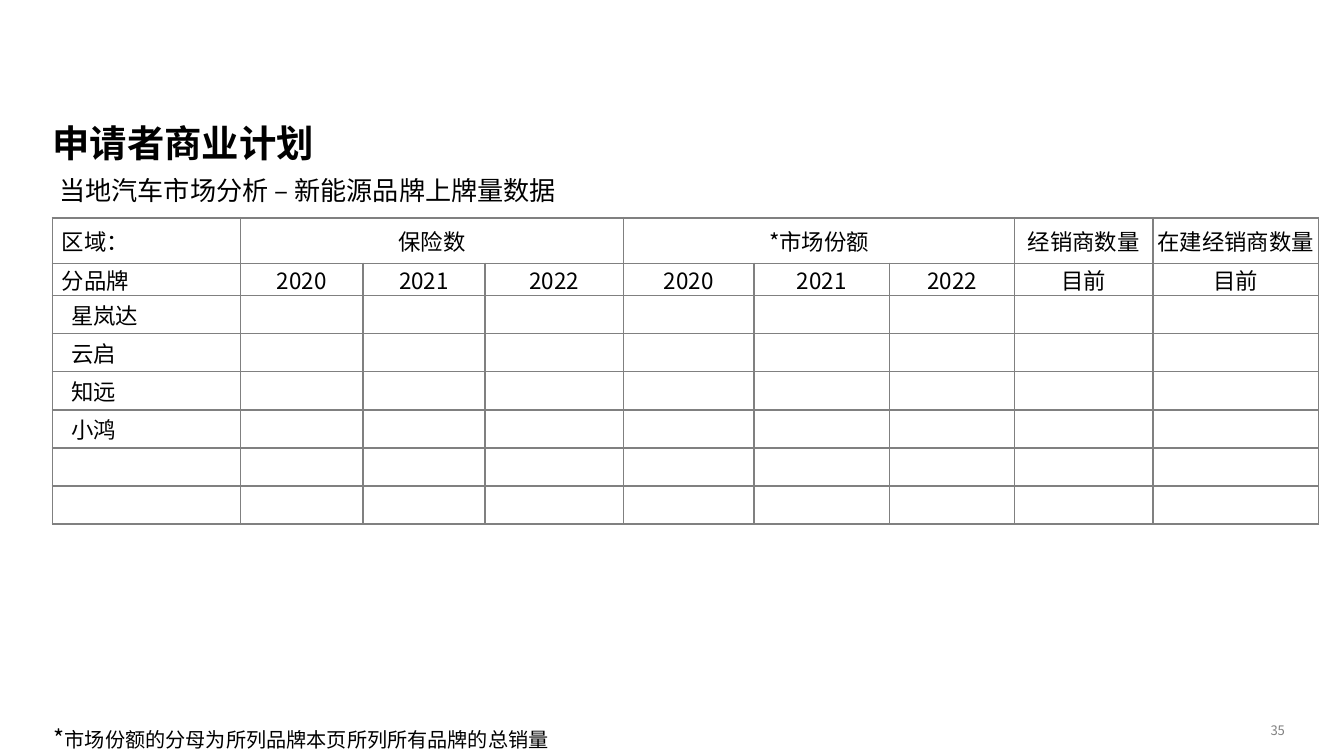
from lxml.etree import SubElement
from pptx import Presentation
from pptx.dml.color import RGBColor
from pptx.enum.text import MSO_ANCHOR as Anchor, PP_ALIGN as Align
from pptx.oxml.ns import qn
from pptx.util import Inches, Pt

FONT = "Noto Sans CJK SC"
BLACK = RGBColor(0x00, 0x00, 0x00)
GRAY = RGBColor(0x80, 0x80, 0x80)
WHITE = RGBColor(0xFF, 0xFF, 0xFF)

SLIDE_WIDTH = 10
SLIDE_HEIGHT = SLIDE_WIDTH * 9 / 16
COLUMN_WIDTHS = [1.4, 0.91, 0.91, 1.03, 0.97, 1.01, 0.93, 1.03, 1.23]
ROW_HEIGHTS = [0.34, 0.24] + [1.7 / 6] * 6
YEARS = ["2020", "2021", "2022"]
BRANDS = ["星岚达", "云启", "知远", "小鸿"]
HEADINGS = ["区域：", "保险数", "", "", "*市场份额", "", "", "经销商数量", "在建经销商数量"]
SUBHEADINGS = ["分品牌", *YEARS, *YEARS, "目前", "目前"]
MERGED_COLUMNS = [(1, 3), (4, 6)]


def set_values(target, values):
    for name, value in values.items():
        setattr(target, name, value)


def add_span(para, text, size, color=BLACK, bold=False):
    span = para.add_run()
    span.text = text
    set_values(span.font, {"name": FONT, "size": Pt(size), "bold": bold})
    span.font.color.rgb = color
    SubElement(span.font._element, qn("a:ea"), typeface=FONT)


def add_text(page, place, spans, color=BLACK, bold=False, anchor=Anchor.TOP,
             align=Align.LEFT, spacing=1.0, insets=(0, 0)):
    box = page.shapes.add_textbox(*map(Inches, place))
    side, end = map(Inches, insets)
    set_values(box.text_frame, {
        "word_wrap": True, "vertical_anchor": anchor,
        "margin_left": side, "margin_right": side,
        "margin_top": end, "margin_bottom": end,
    })
    para = box.text_frame.paragraphs[0]
    set_values(para, {"alignment": align, "line_spacing": spacing})
    for text, size in spans:
        add_span(para, text, size, color, bold)


def add_borders(cell):
    properties = cell._tc.get_or_add_tcPr()
    for side in ("lnL", "lnR", "lnT", "lnB"):
        line = SubElement(properties, qn(f"a:{side}"), w=str(Pt(1)))
        fill = SubElement(line, qn("a:solidFill"))
        SubElement(fill, qn("a:srgbClr"), val=str(GRAY))


def format_cell(cell, text, align, inset):
    add_borders(cell)
    cell.fill.solid()
    cell.fill.fore_color.rgb = WHITE
    set_values(cell, {
        "vertical_anchor": Anchor.MIDDLE,
        "margin_left": Inches(inset), "margin_right": Inches(inset),
        "margin_top": 0, "margin_bottom": 0,
    })
    para = cell.text_frame.paragraphs[0]
    para.alignment = align
    if text:
        add_span(para, text, 12)
    else:
        SubElement(para._p, qn("a:endParaRPr"), sz="1200")


def add_brand_table(page):
    blank = [""] * (len(COLUMN_WIDTHS) - 1)
    rows = [HEADINGS, SUBHEADINGS] + [[name, *blank] for name in BRANDS + ["", ""]]
    frame = page.shapes.add_table(
        len(rows), len(COLUMN_WIDTHS), Inches(0.39), Inches(1.62),
        Inches(sum(COLUMN_WIDTHS)), Inches(sum(ROW_HEIGHTS)))
    table = frame.table
    set_values(table, {"first_row": False, "horz_banding": False})
    for column, width in zip(table.columns, COLUMN_WIDTHS):
        column.width = Inches(width)
    for row, height in zip(table.rows, ROW_HEIGHTS):
        row.height = Inches(height)
    for row_index, texts in enumerate(rows):
        label_inset = 0.07 if row_index < 2 else 0.14
        for column_index, text in enumerate(texts):
            is_label = column_index == 0
            format_cell(table.cell(row_index, column_index), text,
                        Align.LEFT if is_label else Align.CENTER,
                        label_inset if is_label else 0)
    for first, last in MERGED_COLUMNS:
        table.cell(0, first).merge(table.cell(0, last))


def main():
    deck = Presentation()
    set_values(deck, {"slide_width": Inches(SLIDE_WIDTH),
                      "slide_height": Inches(SLIDE_HEIGHT)})
    page = deck.slides.add_slide(deck.slide_layouts[6])
    add_text(page, (0.44, 1.25, 9.18, 3.78),
             [("当地汽车市场分析 – 新能源品牌上牌量数据", 14)], spacing=1.2)
    add_text(page, (0.39, 0.88, 9.18, 0.35), [("申请者商业计划", 20)],
             bold=True, anchor=Anchor.BOTTOM, spacing=0.9)
    add_text(page, (9.17, 5.38, 0.39, 0.11), [("35", 7)],
             color=GRAY, anchor=Anchor.MIDDLE, align=Align.RIGHT)
    add_brand_table(page)
    add_text(page, (0.31, 5.34, 4.08, 0.31),
             [("*", 12.6), ("市场份额的分母为所列品牌本页所列所有品牌的总销量", 10.8)],
             insets=(0.09, 0.05))
    deck.save("out.pptx")


if __name__ == "__main__":
    main()
